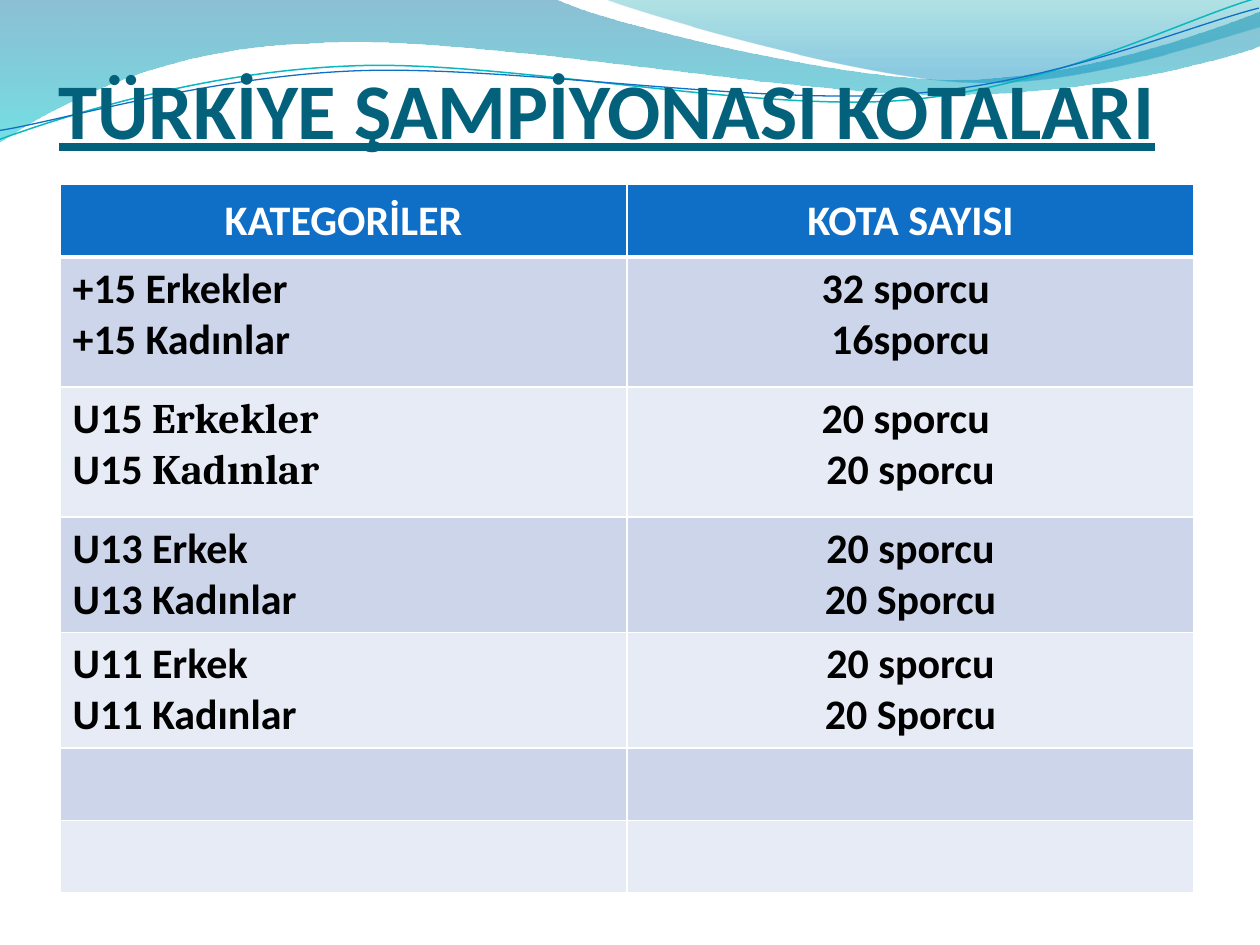
from lxml import etree
from pptx import Presentation
from pptx.dml.color import RGBColor
from pptx.enum.text import MSO_ANCHOR, MSO_AUTO_SIZE, PP_ALIGN
from pptx.oxml.ns import qn
from pptx.util import Cm, Pt

LEFT, CENTER = PP_ALIGN.LEFT, PP_ALIGN.CENTER
TOP, MIDDLE, BOTTOM = MSO_ANCHOR.TOP, MSO_ANCHOR.MIDDLE, MSO_ANCHOR.BOTTOM
FIXED = MSO_AUTO_SIZE.NONE

THEME = {
    "title": "04617B", "head": "0F6FC6", "bands": ["CCD5EA", "E7EBF5"],
    "white": "FFFFFF", "text": "000000",
    "teal": "0AB8BF", "blue": "0F6FC6",
    "wide wave": [(0, "0074A1", 45), (1, "00C6CF", 55)],
    "right wave": [(0, "00A1A9", 30), (0.8, "008BBF", 45)],
    "title size": 45, "cell size": 24,
    "font": "Calibri", "serif": "Cambria",
}
INCH = 2.54

WAVES = [
    {"start": (0, 0), "curves": [
        [(4.4, -0.01)],
        [(4.76, 0.17), (6.64, 0.63), (7.58, 0.63)],
        [(8.53, 0.63), (9.58, 0.26), (10, 0.09)],
        [(10.01, 0.36)],
        [(9.83, 0.44), (8.7, 0.76), (7.46, 0.75)],
        [(6.22, 0.75), (3.82, 0.28), (2.57, 0.34)],
        [(1.29, 0.36), (0.46, 0.83), (-0.01, 1.13)],
        [(0, 0)]],
     "stops": THEME["wide wave"]},
    {"start": (4.79, -0.01), "curves": [
        [(5.09, 0.11), (6.82, 0.62), (7.69, 0.65)],
        [(8.56, 0.69), (9.61, 0.32), (10, 0.21)],
        [(10, 0)],
        [(4.79, -0.01)]],
     "stops": THEME["right wave"]},
    {"start": (-0.02, 0.87), "curves": [
        [(0.47, 0.72), (1.58, 0.41), (2.78, 0.42)],
        [(3.96, 0.42), (5.91, 0.93), (7.12, 0.9)],
        [(8.32, 0.87), (9.4, 0.36), (10, 0.22)]],
     "line": (THEME["teal"], 0.85)},
    {"start": (-0.02, 0.8), "curves": [
        [(0.46, 0.75), (1.64, 0.45), (2.83, 0.46)],
        [(4.03, 0.47), (5.96, 0.88), (7.16, 0.85)],
        [(8.35, 0.83), (9.42, 0.42), (10.01, 0.3)]],
     "line": (THEME["blue"], 0.75)},
]

ROWS = [
    (1.46, ["KATEGORİLER"], ["KOTA SAYISI"]),
    (2.62, ["+15 Erkekler", "+15 Kadınlar"], ["32 sporcu ", "16sporcu"]),
    (2.62, ["U15 |Erkekler", "U15 |Kadınlar"], ["20 sporcu ", "20 sporcu"]),
    (2.33, ["U13 Erkek", "U13 Kadınlar"], ["20 sporcu", "20 Sporcu"]),
    (2.33, ["U11 Erkek", "U11 Kadınlar"], ["20 sporcu", "20 Sporcu"]),
    (1.46, [], []),
    (1.46, [], []),
]


def draw(shapes, start, curves, close):
    spots = [(Cm(x * INCH), Cm(y * INCH)) for x, y in [start, *sum(curves, [])]]
    path = shapes.build_freeform(*spots[0])
    path.add_line_segments(spots[1:], close=close)
    shape = path.convert_to_shape()
    steps = iter(list(shape.element.iter(qn("a:lnTo"))))
    for curve in curves:
        group = [next(steps) for spot in curve]
        if len(group) == 3:
            bend = etree.Element(qn("a:cubicBezTo"))
            group[0].addprevious(bend)
            for step in group:
                bend.append(step[0])
                step.getparent().remove(step)
    return shape


def write(para, text, size, color, **extra):
    for part, font in zip(text.split("|"), (THEME["font"], THEME["serif"])):
        run = para.add_run()
        run.text = part
        style = {"name": font, "size": Pt(size), "bold": True, **extra}
        for key, value in style.items():
            setattr(run.font, key, value)
        run.font.color.rgb = RGBColor.from_string(color)


deck = Presentation()
deck.slide_width, deck.slide_height = Cm(25.4), Cm(19.05)
slide = deck.slides.add_slide(deck.slide_layouts[5])

for wave in WAVES:
    shape = draw(slide.shapes, wave["start"], wave["curves"], "stops" in wave)
    shape.shadow.inherit = False
    if "line" in wave:
        color, width = wave["line"]
        shape.rotation = 357.3
        shape.fill.background()
        shape.line.color.rgb = RGBColor.from_string(color)
        shape.line.width = Pt(width)
        continue
    shape.line.fill.background()
    shape.fill.gradient()
    shape.fill.gradient_angle = 270
    for stop, (place, color, alpha) in zip(shape.fill.gradient_stops, wave["stops"]):
        stop.position = place
        stop.color.rgb = RGBColor.from_string(color)
    for node, (place, color, alpha) in zip(shape.element.iter(qn("a:srgbClr")), wave["stops"]):
        etree.SubElement(node, qn("a:alpha"), val=str(alpha * 1000))

title = slide.shapes.title
title.element.getparent().append(title.element)
place = {"left": 1.18, "top": 1.53, "width": 22.86, "height": 1.6}
for key, value in place.items():
    setattr(title, key, Cm(value))
frame = title.text_frame
style = {"margin_left": 0, "margin_right": 0, "margin_top": Cm(0.13), "margin_bottom": 0,
         "vertical_anchor": BOTTOM, "auto_size": FIXED, "word_wrap": True}
for key, value in style.items():
    setattr(frame, key, value)
frame.paragraphs[0].alignment = LEFT
write(frame.paragraphs[0], "TÜRKİYE ŞAMPİYONASI KOTALARI",
      THEME["title size"], THEME["title"], underline=True)

table = slide.shapes.add_table(
    len(ROWS), 2, Cm(1.21), Cm(3.72), Cm(22.86), Cm(sum(row[0] for row in ROWS))).table
table.horz_banding = False
for column in table.columns:
    column.width = Cm(11.43)

for r, (height, *texts) in enumerate(ROWS):
    table.rows[r].height = Cm(height)
    head = r == 0
    for c, lines in enumerate(texts):
        cell = table.cell(r, c)
        cell.vertical_anchor = MIDDLE if head else TOP
        for side in ("L", "R", "T", "B"):
            thick = (r, side) in ((0, "B"), (1, "T"))
            edge = etree.SubElement(cell._tc.get_or_add_tcPr(), qn(f"a:ln{side}"),
                                    w=str(Pt(3 if thick else 1)))
            fill = etree.SubElement(edge, qn("a:solidFill"))
            etree.SubElement(fill, qn("a:srgbClr"), val=THEME["white"])
        cell.fill.solid()
        cell.fill.fore_color.rgb = RGBColor.from_string(
            THEME["head"] if head else THEME["bands"][(r - 1) % 2])
        frame = cell.text_frame
        for i, line in enumerate(lines):
            para = frame.add_paragraph() if i else frame.paragraphs[0]
            para.alignment = CENTER if head or c else LEFT
            write(para, line, THEME["cell size"], THEME["white" if head else "text"])

deck.save("out.pptx")
